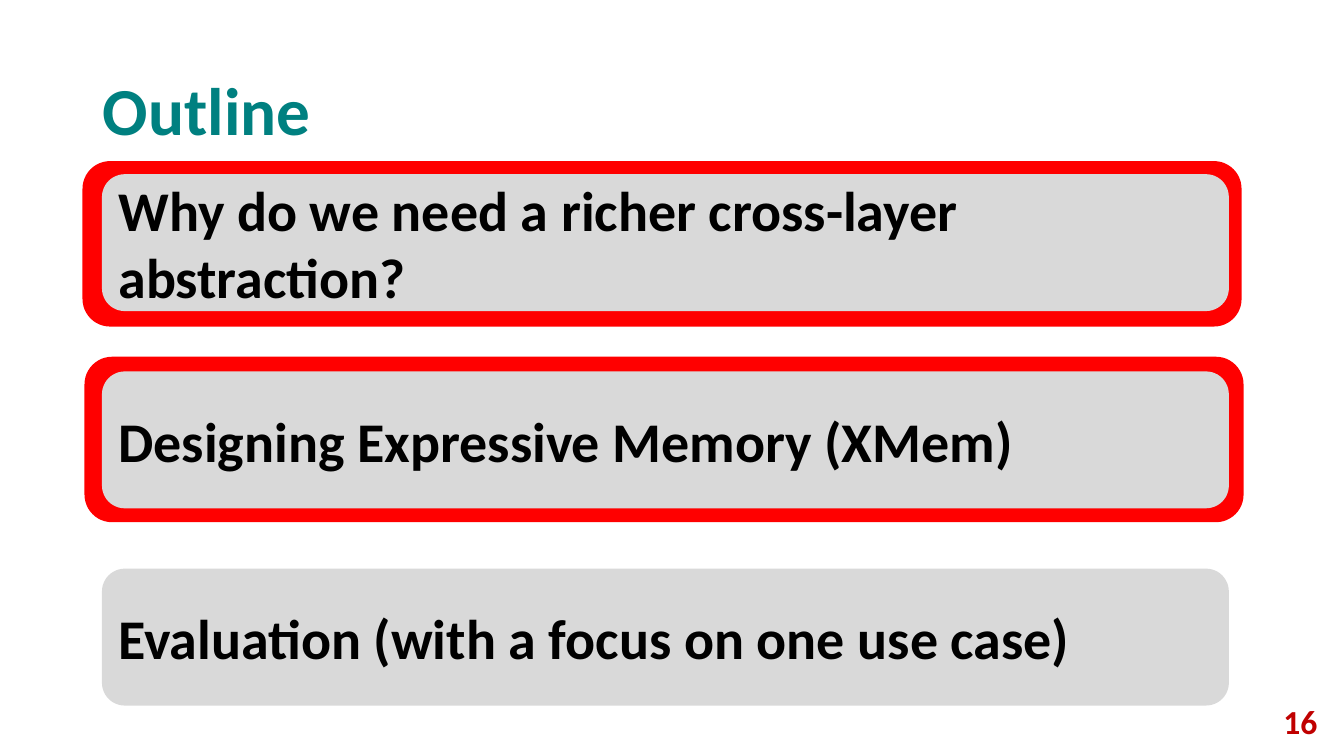
"""Build the talk outline slide with two highlighted topics."""
from dataclasses import dataclass
from typing import Optional

import pptx
import pptx.dml.color
import pptx.enum.shapes
import pptx.enum.text
import pptx.util
from pptx.util import Cm

COLORS = {"title": "008080", "number": "C00000", "frame": "FF0000",
          "topic": "D9D9D9", "text": "000000"}
ALIGN = pptx.enum.text.PP_ALIGN
LEFT, TOP, PITCH = 2.57, 4.39, 4.97
WIDTH, HEIGHT = 28.4, 3.45
FRAME_WIDTH, FRAME_HEIGHT = 29.21, 4.17


@dataclass
class Topic:
    text: str
    frame: Optional[tuple[float, float]] = None


TOPICS = [
    Topic("Why do we need a richer cross-layer abstraction?", (2.08, 4.06)),
    Topic("Designing Expressive Memory (XMem)", (2.13, 8.99)),
    Topic("Evaluation (with a focus on one use case)"),
]


def rgb(name: str) -> pptx.dml.color.RGBColor:
    return pptx.dml.color.RGBColor.from_string(COLORS[name])


def write(sp, text: str, *, size: float, color: str = "text",
          align=ALIGN.LEFT, spacing: float = 1.0) -> None:
    tf = sp.text_frame
    tf.word_wrap = True
    tf.auto_size = pptx.enum.text.MSO_AUTO_SIZE.NONE
    tf.vertical_anchor = pptx.enum.text.MSO_ANCHOR.MIDDLE
    p = tf.paragraphs[0]
    p.alignment = align
    p.line_spacing = spacing
    r = p.add_run()
    r.text = text
    r.font.name = "Calibri"
    r.font.size = pptx.util.Pt(size)
    r.font.bold = True
    r.font.color.rgb = rgb(color)


def add_box(s, x: float, y: float, w: float, h: float, color: str):
    sp = s.shapes.add_shape(pptx.enum.shapes.MSO_SHAPE.ROUNDED_RECTANGLE,
                            Cm(x), Cm(y), Cm(w), Cm(h))
    sp.shadow.inherit = False
    sp.fill.solid()
    sp.fill.fore_color.rgb = rgb(color)
    sp.line.fill.background()
    return sp


def add_topic(s, topic: Topic, y: float) -> None:
    if topic.frame:
        add_box(s, *topic.frame, FRAME_WIDTH, FRAME_HEIGHT, "frame")
    write(add_box(s, LEFT, y, WIDTH, HEIGHT, "topic"), topic.text, size=40)


def main() -> None:
    prs = pptx.Presentation()
    prs.slide_width, prs.slide_height = Cm(33.87), Cm(19.05)
    s = prs.slides.add_slide(prs.slide_layouts[5])

    title = s.shapes.title
    title.left, title.top = Cm(2.34), Cm(1.02)
    title.width, title.height = Cm(29.21), Cm(3.68)
    write(title, "Outline", size=48, color="title", spacing=0.9)

    for i, topic in enumerate(TOPICS):
        add_topic(s, topic, TOP + i * PITCH)

    number = s.shapes.add_textbox(Cm(23.93), Cm(17.65), Cm(9.52), Cm(1.02))
    write(number, "16", size=24, color="number", align=ALIGN.RIGHT)

    prs.save("out.pptx")


if __name__ == "__main__":
    main()
